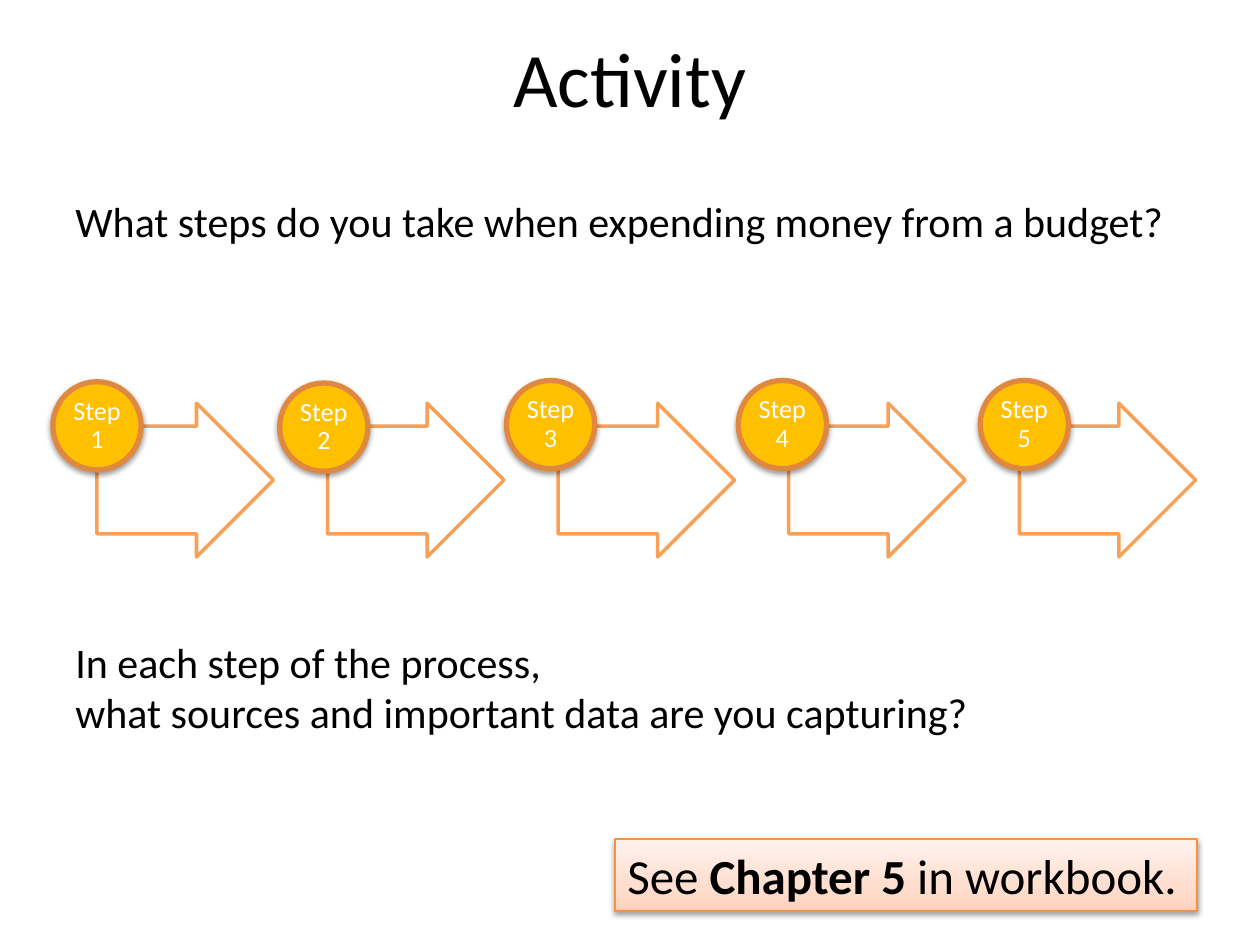
from copy import deepcopy

from pptx import Presentation
from pptx.dml.color import RGBColor
from pptx.enum.shapes import MSO_SHAPE as Shape
from pptx.enum.text import MSO_ANCHOR as Anchor, PP_ALIGN as Align
from pptx.oxml.ns import qn
from pptx.oxml.xmlchemy import OxmlElement as Element
from pptx.util import Inches, Pt

FONT = "Calibri"
CIRCLES = [(0.42, 3.03), (2.22, 3.04), (4.02, 3.02), (5.86, 3.02), (7.78, 3.02)]


def paint(color, code):
    color.rgb = RGBColor.from_string(code)


def child(node, tag, **attrs):
    item = Element(tag)
    for key, value in attrs.items():
        item.set(key, str(value))
    node.append(item)
    return item


def style(frame, size, code="000000", align=Align.LEFT):
    for par in frame.paragraphs:
        par.alignment = align
        for run in par.runs:
            run.font.name = FONT
            run.font.size = Pt(size)
            paint(run.font.color, code)


def add_text(slide, box, text, size, align=Align.LEFT, anchor=Anchor.TOP):
    frame = slide.shapes.add_textbox(*map(Inches, box)).text_frame
    frame.word_wrap = True
    frame.vertical_anchor = anchor
    frame.text = text
    style(frame, size, align=align)


def add_shape(slide, kind, box, line, width, fill=None):
    shape = slide.shapes.add_shape(kind, *map(Inches, box))
    shape.shadow.inherit = False
    paint(shape.line.color, line)
    shape.line.width = Pt(width)
    if fill:
        shape.fill.solid()
        paint(shape.fill.fore_color, fill)
    return shape


def add_shadow(shape):
    effects = shape.element.spPr.find(qn("a:effectLst"))
    outer = child(effects, "a:outerShdw", blurRad=Pt(3.1), dist=Pt(1.6),
                  dir=5400000, rotWithShape=0)
    color = child(outer, "a:srgbClr", val="000000")
    child(color, "a:alpha", val=38000)


def add_arrow(slide, left):
    arrow = add_shape(slide, Shape.RIGHT_ARROW, (left, 3.2, 1.4, 1.22),
                      "F79646", 2, "FFFFFF")
    arrow.adjustments[0] = 0.7
    arrow.adjustments[1] = 0.5
    for color in arrow.element.spPr.iter(qn("a:srgbClr")):
        child(color, "a:alpha", val=90000)


def add_circle(slide, left, top, text):
    circle = add_shape(slide, Shape.OVAL, (left, top, 0.7, 0.7),
                       "E08840", 3, "FFC000")
    add_shadow(circle)
    frame = circle.text_frame
    frame.margin_left = frame.margin_right = Inches(0.01)
    frame.margin_top = frame.margin_bottom = Inches(0.01)
    frame.word_wrap = True
    frame.vertical_anchor = Anchor.MIDDLE
    frame.text = text
    frame.paragraphs[0].line_spacing = 0.9
    style(frame, 15, "FFFFFF", Align.CENTER)


def fill_fade(shape, colors):
    shape.fill.gradient()
    shape.fill.gradient_angle = 90
    stops = shape.element.spPr.find(".//" + qn("a:gsLst"))
    stops.insert(1, deepcopy(stops[0]))
    for stop, (place, code) in zip(shape.fill.gradient_stops, colors):
        stop.position = place
        paint(stop.color, code)


def add_note(slide):
    note = add_shape(slide, Shape.RECTANGLE, (4.88, 6.66, 4.62, 0.57),
                     "F69240", 0.75)
    fill_fade(note, [(0, "FFD2BD"), (0.35, "FFDED0"), (1, "FFF2ED")])
    add_shadow(note)
    frame = note.text_frame
    frame.word_wrap = True
    frame.vertical_anchor = Anchor.TOP
    for text in ("See ", "Chapter 5", " in workbook."):
        run = frame.paragraphs[0].add_run()
        run.text = text
        run.font.bold = text == "Chapter 5"
    style(frame, 28)


def main():
    deck = Presentation()
    deck.slide_width, deck.slide_height = Inches(10), Inches(7.5)
    slide = deck.slides.add_slide(deck.slide_layouts[6])
    add_text(slide, (0.5, 0.17, 9, 0.87), "Activity", 44,
             Align.CENTER, Anchor.MIDDLE)
    add_text(slide, (0.5, 1.5, 9, 0.5),
             "What steps do you take when expending money from a budget?", 24)
    for index, (left, top) in enumerate(CIRCLES):
        add_arrow(slide, 0.77 + index * 1.83)
        add_circle(slide, left, top, f"Step {index + 1}")
    add_text(slide, (0.5, 5, 9, 0.91),
             "In each step of the process,\n"
             "what sources and important data are you capturing?", 24)
    add_note(slide)
    deck.save("out.pptx")


if __name__ == "__main__":
    main()
